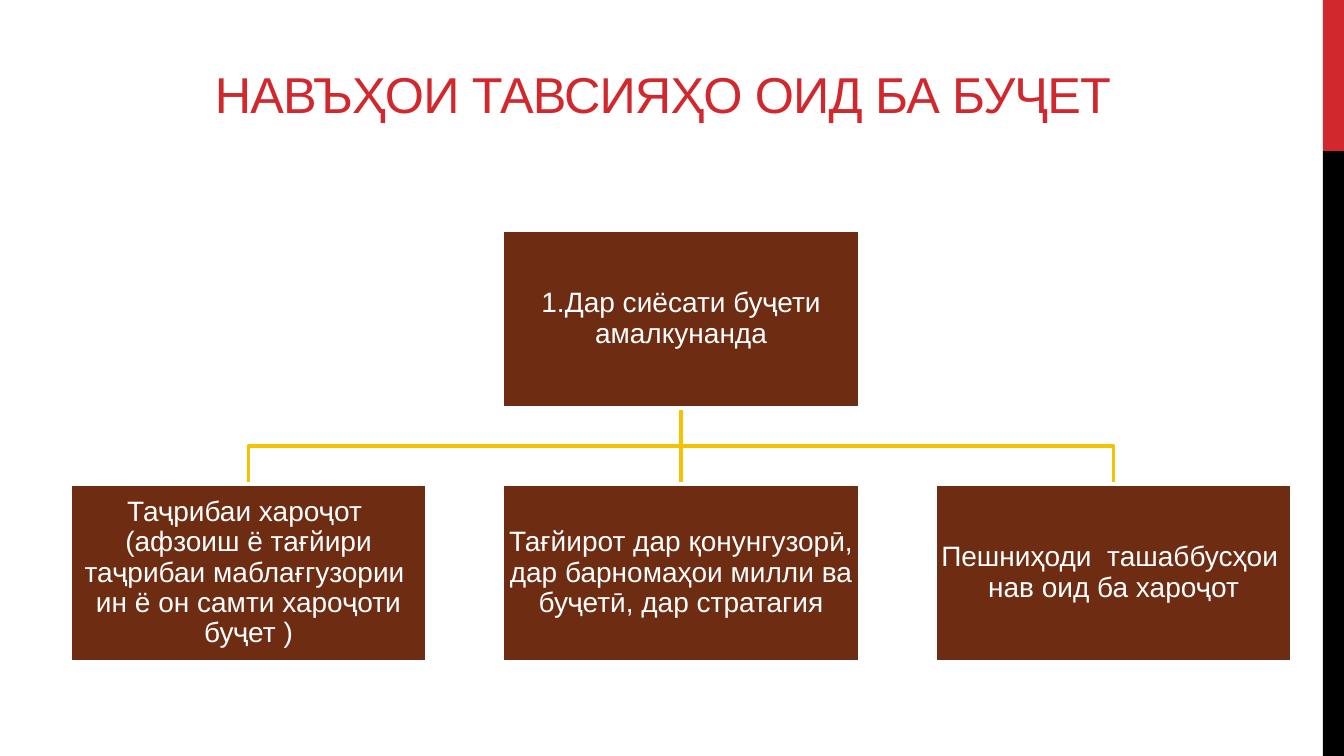
from lxml.etree import SubElement
from pptx import Presentation
from pptx.dml.color import RGBColor
from pptx.enum.shapes import MSO_CONNECTOR, MSO_SHAPE
from pptx.enum.text import MSO_ANCHOR, MSO_AUTO_SIZE, PP_ALIGN
from pptx.oxml.ns import qn
from pptx.util import Inches, Pt

RED = RGBColor(0xD1, 0x28, 0x2E)
BLACK = RGBColor(0, 0, 0)
WHITE = RGBColor(255, 255, 255)
BROWN = RGBColor(0x6E, 0x2C, 0x12)
GOLD = RGBColor(0xF5, 0xC2, 0x01)

TITLE = "НАВЪҲОИ ТАВСИЯҲО ОИД БА БУҶЕТ"
ROOT = "Дар сиёсати буҷети амалкунанда"
LEAVES = [
    "Таҷрибаи хароҷот  (афзоиш ё тағйири таҷрибаи маблағгузории  ин ё он самти хароҷоти буҷет )",
    "Тағйирот дар қонунгузорӣ, дар барномаҳои милли ва буҷетӣ, дар стратагия",
    "Пешниҳоди  ташаббусҳои  нав оид ба хароҷот",
]
BOX_W, BOX_H = 3.55, 1.77


def write(shape, text, size, color, anchor, inset=None, lead=None, space=None, number=False):
    frame = shape.text_frame
    frame.word_wrap = True
    frame.auto_size = MSO_AUTO_SIZE.NONE
    frame.vertical_anchor = anchor
    if inset is not None:
        frame.margin_left = frame.margin_right = Inches(inset)
        frame.margin_top = frame.margin_bottom = Inches(inset)
    para = frame.paragraphs[0]
    para.alignment = PP_ALIGN.CENTER
    if lead:
        para.line_spacing = lead
    run = para.add_run()
    run.text = text
    run.font.name = "Arial"
    run.font.size = Pt(size)
    run.font.color.rgb = color
    if space:
        run.font._element.set("spc", str(space))
    if number:
        props = para._p.get_or_add_pPr()
        props.set("marL", "0")
        props.set("indent", "0")
        SubElement(props, qn("a:buAutoNum"), type="arabicPeriod")


def block(slide, left, top, width, height, fill):
    shape = slide.shapes.add_shape(
        MSO_SHAPE.RECTANGLE, Inches(left), Inches(top), Inches(width), Inches(height))
    shape.shadow.inherit = False
    shape.fill.solid()
    shape.fill.fore_color.rgb = fill
    shape.line.fill.background()
    return shape


def node(slide, left, top, text, number=False):
    shape = block(slide, left, top, BOX_W, BOX_H, BROWN)
    shape.line.color.rgb = WHITE
    shape.line.width = Pt(3.25)
    write(shape, text, 20, WHITE, MSO_ANCHOR.MIDDLE, inset=0.01, lead=0.9, number=number)
    return shape


def ink(line):
    line.color.rgb = GOLD
    line.width = Pt(2.25)


def elbow(slide, start, end):
    (x, y), (far, low) = start, end
    mid = (y + low) / 2
    pen = slide.shapes.build_freeform(Inches(x), Inches(y))
    pen.add_line_segments(
        [(Inches(a), Inches(b)) for a, b in [(x, mid), (far, mid), (far, low)]], close=False)
    shape = pen.convert_to_shape()
    shape.shadow.inherit = False
    shape.fill.background()
    ink(shape.line)


def stem(slide, start, end):
    line = slide.shapes.add_connector(
        MSO_CONNECTOR.STRAIGHT, *[Inches(v) for v in (*start, *end)])
    SubElement(line._element.spPr, qn("a:effectLst"))
    ink(line.line)
    return line


def tree(slide, left, top, width, height):
    step = (width - BOX_W) / (len(LEAVES) - 1)
    lefts = [left + i * step for i in range(len(LEAVES))]
    low = top + height - BOX_H
    first, centre, last = [x + BOX_W / 2 for x in lefts]
    start = (centre, top + BOX_H)
    elbow(slide, start, (last, low))
    trunk = stem(slide, start, (centre, low))
    elbow(slide, start, (first, low))
    root = node(slide, lefts[1], top, ROOT, number=True)
    leaves = [node(slide, x, low, text) for x, text in zip(lefts, LEAVES)]
    trunk.begin_connect(root, 2)
    trunk.end_connect(leaves[1], 0)


def head(slide, left, top, width, height):
    title = slide.shapes.title
    title.left, title.top = Inches(left), Inches(top)
    title.width, title.height = Inches(width), Inches(height)
    write(title, TITLE, 36, RED, MSO_ANCHOR.BOTTOM, space=-60)


def side(slide, left, top, width, height):
    cut = height / 5
    block(slide, left, top, width, cut, RED)
    block(slide, left, top + cut, width, height - cut, BLACK)


def main():
    deck = Presentation()
    deck.slide_width, deck.slide_height = Inches(13.33), Inches(7.5)
    slide = deck.slides.add_slide(deck.slide_layouts[5])
    side(slide, 13.12, 0, 0.21, 7.5)
    head(slide, 0.33, 0.34, 12.49, 0.94)
    tree(slide, 0.69, 2.28, 12.13, 4.29)
    deck.save("out.pptx")


if __name__ == "__main__":
    main()
